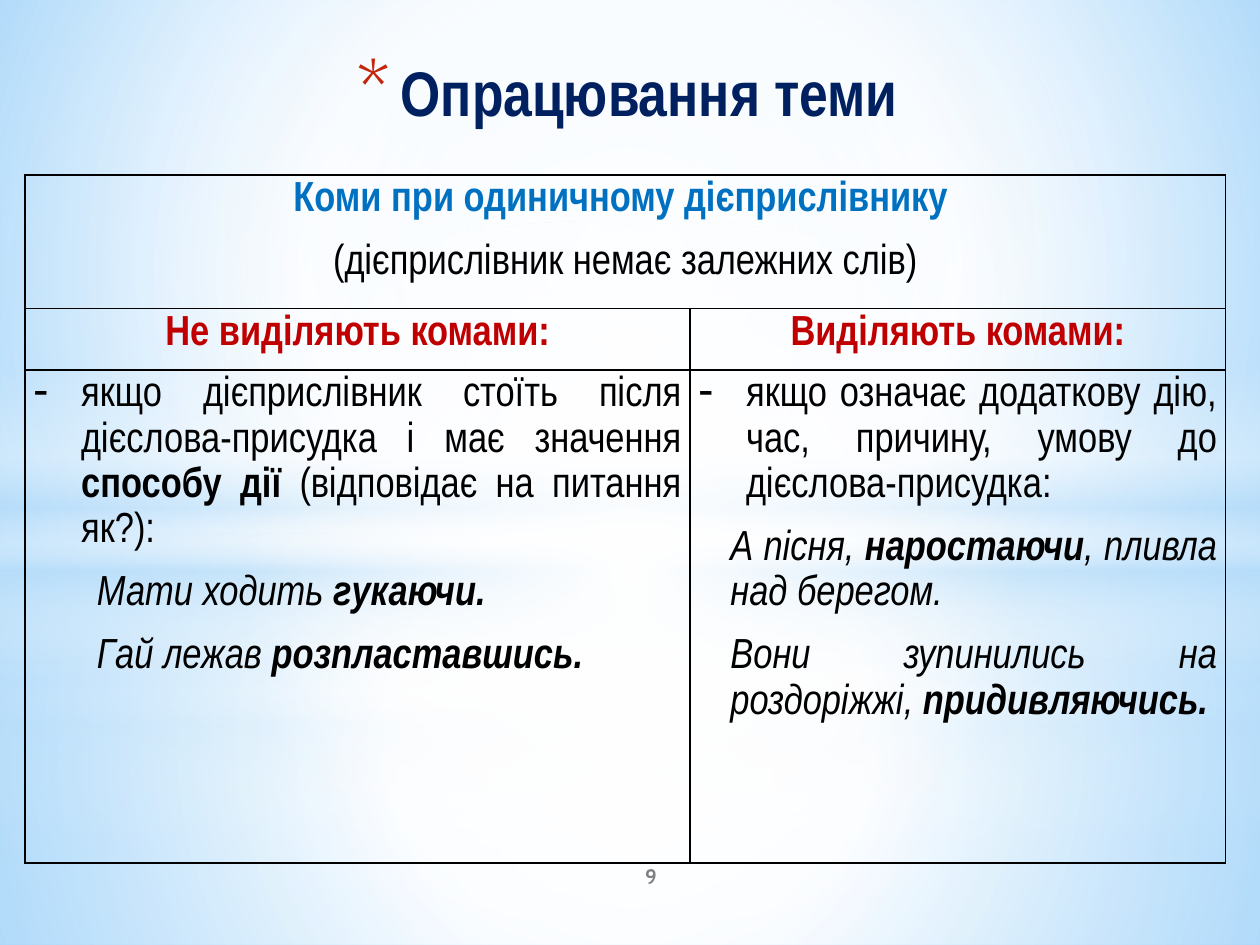
from dataclasses import dataclass

from lxml.etree import SubElement
from pptx import Presentation
from pptx.dml.color import RGBColor
from pptx.enum.shapes import MSO_SHAPE
from pptx.enum.text import MSO_ANCHOR, PP_ALIGN
from pptx.oxml.ns import qn
from pptx.util import Pt


@dataclass(frozen=True)
class Theme:
    navy: str = "002060"
    blue: str = "0070C0"
    red: str = "C00000"
    bright_red: str = "FF0000"
    star: str = "C3260C"
    black: str = "000000"
    grey: str = "808080"
    white: str = "FFFFFF"
    sky: str = "B4DCFA"
    title_size: int = 36
    title_end_size: int = 32
    body_size: int = 24
    number_size: int = 12
    body_font: str = "Arial Narrow"
    title_end_font: str = "Arial"
    number_font: str = "Cabin"


THEME = Theme()


def set_gradient(parent, stops, focus=None):
    """Replace the solid fill; stops are (position, colour, opacity), all in percent."""
    solid = parent.find(qn("a:solidFill"))
    grad = solid.makeelement(qn("a:gradFill"), {"rotWithShape": "1"})
    parent.replace(solid, grad)
    stop_list = SubElement(grad, qn("a:gsLst"))
    for position, color, opacity in stops:
        stop = SubElement(stop_list, qn("a:gs"), pos=str(position * 1000))
        rgb = SubElement(stop, qn("a:srgbClr"), val=color)
        if opacity < 100:
            SubElement(rgb, qn("a:alpha"), val=str(opacity * 1000))
    if focus:
        circle = SubElement(grad, qn("a:path"), path="circle")
        sides = {side: str(v * 1000) for side, v in zip("ltrb", focus)}
        SubElement(circle, qn("a:fillToRect"), **sides)
    else:
        SubElement(grad, qn("a:lin"), ang="5400000", scaled="0")


def add_text(p, text, size=THEME.body_size, font=THEME.body_font, color=THEME.black,
             bold=False, italic=False):
    r = p.add_run()
    r.text = text
    r.font.size = Pt(size)
    r.font.name = font
    r.font.color.rgb = RGBColor.from_string(color)
    r.font.bold = bold
    r.font.italic = italic


prs = Presentation()
prs.slide_width, prs.slide_height = Pt(720), Pt(540)
s = prs.slides.add_slide(prs.slide_layouts[6])

# Background
fill = s.background.fill
fill.solid()
set_gradient(s.background._cSld.bg.bgPr,
             [(0, "9ED5FF", 100), (60, THEME.white, 100), (100, "5BB9FF", 100)],
             (20, 10, 20, 60))

# Two layers of soft light: lower panel, upper panel, horizon band, glow
W, S = THEME.white, THEME.sky
CENTER = (50, 50, 50, 50)
HORIZON = [(0, W, 0), (29, W, 30), (45, S, 40), (55, W, 26), (65, S, 60), (100, W, 0)]
for split, band_top, extra, glow_end in ((402, 296.6, 0, 56), (304.6, 208.8, 1, 54)):
    lower = [(0, W, 91 + extra), (37, W, 76 + extra), (100, S, 79 + extra)]
    upper = [(0, W, 89 + extra), (48, W, 62 + extra), (100, S, 79 + extra)]
    glow = [(0, W, 100), (glow_end, W, 0)]
    for kind, top, height, stops, focus in (
            (MSO_SHAPE.RECTANGLE, split, 540 - split, lower, CENTER),
            (MSO_SHAPE.RECTANGLE, 0, split, upper, CENTER),
            (MSO_SHAPE.RECTANGLE, band_top, 180, HORIZON, None),
            (MSO_SHAPE.OVAL, 126, 402, glow, CENTER)):
        sp = s.shapes.add_shape(kind, 0, Pt(top), Pt(720), Pt(height))
        sp.shadow.inherit = False
        sp.line.fill.background()
        sp.fill.solid()
        set_gradient(sp._element.spPr, stops, focus)

# Title
tf = s.shapes.add_textbox(Pt(56.9), Pt(31.7), Pt(612), Pt(45.4)).text_frame
tf.word_wrap = True
tf.vertical_anchor = MSO_ANCHOR.BOTTOM
p = tf.paragraphs[0]
p.alignment = PP_ALIGN.CENTER
pPr = p._p.get_or_add_pPr()
pPr.set("marL", str(Pt(25.2)))
pPr.set("indent", str(Pt(-25.2)))
SubElement(SubElement(pPr, qn("a:buClr")), qn("a:srgbClr"), val=THEME.star)
SubElement(pPr, qn("a:buSzPct"), val="128000")
SubElement(pPr, qn("a:buFont"), typeface=THEME.number_font)
SubElement(pPr, qn("a:buChar"), char="*")
add_text(p, "Опрацювання теми", size=THEME.title_size, color=THEME.navy, bold=True)
add_text(p, " ", size=THEME.title_end_size, font=THEME.title_end_font,
         color=THEME.bright_red, bold=True)

# Slide number
tf = s.shapes.add_textbox(Pt(300), Pt(486), Pt(144), Pt(28.8)).text_frame
tf.word_wrap = True
tf.vertical_anchor = MSO_ANCHOR.MIDDLE
p = tf.paragraphs[0]
p.alignment = PP_ALIGN.CENTER
add_text(p, "9", size=THEME.number_size, font=THEME.number_font, color=THEME.grey, bold=True)

# Table content: cell -> paragraphs of (alignment, indent, hanging dash, runs)
C, J = PP_ALIGN.CENTER, PP_ALIGN.JUSTIFY
RED_HEAD = {"color": THEME.red, "bold": True}
ITALIC = {"italic": True}
STRONG = {"italic": True, "bold": True}
CELLS = {
    (0, 0): [
        (C, 0, False, [("Коми при одиничному дієприслівнику ",
                        {"color": THEME.blue, "bold": True})]),
        (C, 0, False, [("(дієприслівник немає залежних слів)", {})])],
    (0, 1): [],
    (1, 0): [(C, 0, False, [("Не виділяють комами:", RED_HEAD)])],
    (1, 1): [(C, 0, False, [("Виділяють комами:", RED_HEAD)])],
    (2, 0): [
        (J, 27, True, [("якщо дієприслівник стоїть після дієслова-присудка і має значення ", {}),
                       ("способу дії ", {"bold": True}),
                       ("(відповідає на питання як?):", {})]),
        (J, 36, False, [("Мати ходить ", ITALIC), ("гукаючи.", STRONG)]),
        (J, 36, False, [("Гай лежав ", ITALIC), ("розпластавшись.", STRONG)])],
    (2, 1): [
        (J, 27, True, [("якщо означає додаткову дію, час, причину, умову до "
                        "дієслова-присудка:", {})]),
        (J, 18, False, [("А пісня, ", ITALIC), ("наростаючи", STRONG),
                        (", пливла над берегом.", ITALIC)]),
        (J, 18, False, [("Вони зупинились на роздоріжжі, ", ITALIC),
                        ("придивляючись.", STRONG)])],
}

# Table
table = s.shapes.add_table(3, 2, Pt(14.4), Pt(100), Pt(686), Pt(386)).table
table.first_row = table.horz_banding = False
for column, width in zip(table.columns, (380, 306)):
    column.width = Pt(width)
for row, height in zip(table.rows, (69.1, 35.3, 281.6)):
    row.height = Pt(height)
table.cell(0, 0).merge(table.cell(0, 1))

for (row, col), paragraphs in CELLS.items():
    cell = table.cell(row, col)
    cell.margin_left = cell.margin_right = Pt(5)
    cell.margin_top = cell.margin_bottom = 0
    cell.fill.background()
    tcPr = cell._tc.get_or_add_tcPr()
    for i, side in enumerate(("lnL", "lnR", "lnT", "lnB")):
        line = tcPr.makeelement(qn(f"a:{side}"), {"w": str(Pt(1))})
        SubElement(SubElement(line, qn("a:solidFill")), qn("a:srgbClr"), val=THEME.black)
        tcPr.insert(i, line)
    tf = cell.text_frame
    for i, (alignment, indent, dash, runs) in enumerate(paragraphs):
        p = tf.add_paragraph() if i else tf.paragraphs[0]
        p.alignment = alignment
        p.line_spacing = 1.15
        p.space_after = Pt(10)
        pPr = p._p.get_or_add_pPr()
        pPr.set("marL", str(Pt(indent)))
        pPr.set("indent", str(Pt(-indent if dash else 0)))
        if dash:
            SubElement(pPr, qn("a:buChar"), char="-")
        for text, style in runs:
            add_text(p, text, **style)

prs.save("out.pptx")
